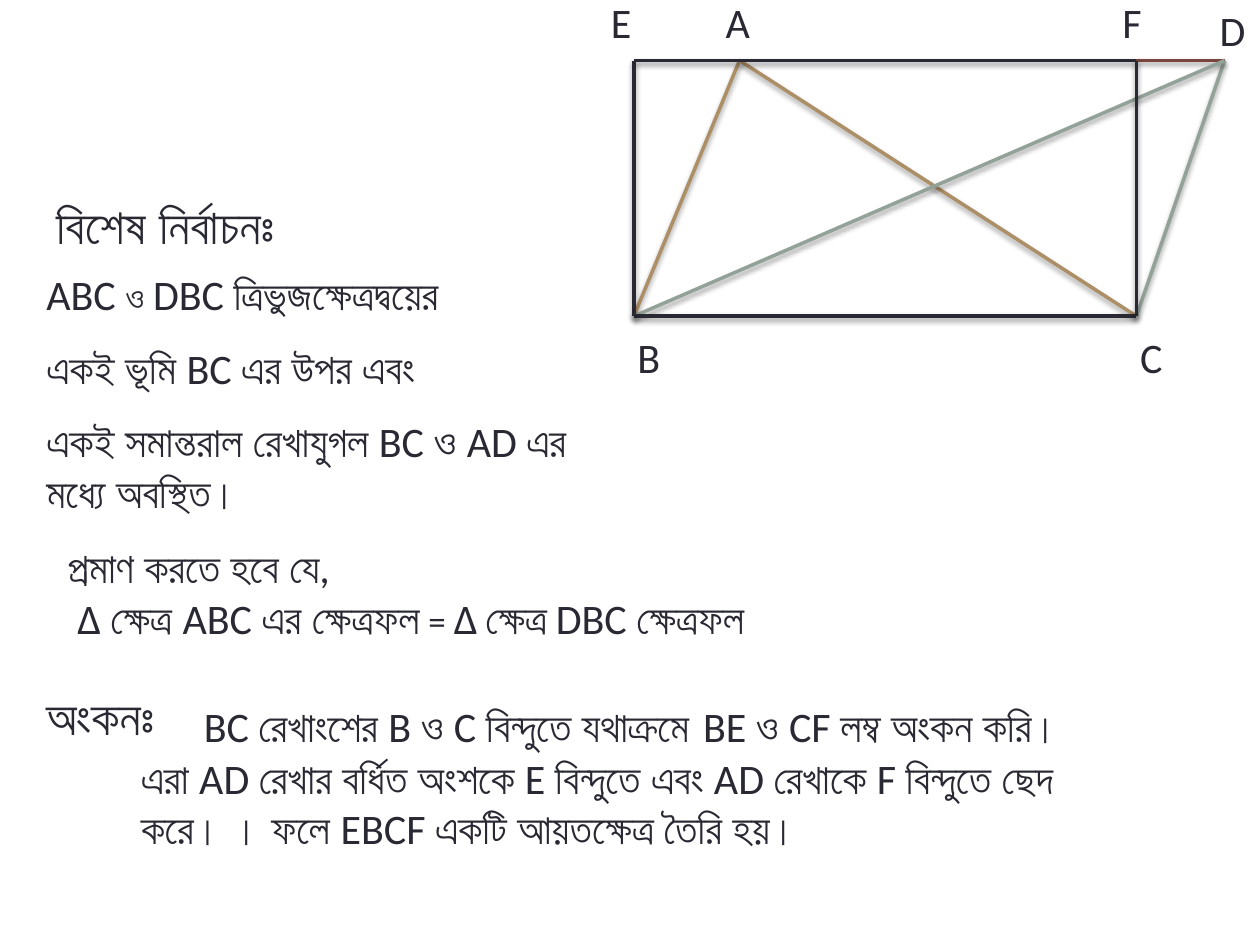
from lxml.etree import SubElement
from pptx import Presentation
from pptx.dml.color import RGBColor
from pptx.enum.shapes import MSO_CONNECTOR
from pptx.enum.text import MSO_AUTO_SIZE
from pptx.oxml.ns import qn
from pptx.util import Pt

INK = RGBColor(0x29, 0x29, 0x34)
RED = RGBColor(0x79, 0x46, 0x3D)
TAN = RGBColor(0xAD, 0x8F, 0x67)
SAGE = RGBColor(0x93, 0xA2, 0x99)

TOP, BASE = 34.6, 180.7
LEFT, RIGHT = 362.2, 649.4
SPOTS = {
    "A": (422.6, TOP), "F": (RIGHT, TOP), "E": (LEFT, TOP),
    "B": (LEFT, BASE), "C": (RIGHT, BASE), "D": (699.8, TOP),
}
UNDER = [("FD", RED), ("DC", SAGE), ("AC", TAN), ("AB", TAN), ("BD", SAGE)]
FRAME = [("EF", INK), ("BC", INK), ("BE", INK), ("CF", INK)]
LABELS = {
    "A": (407.5, -5.8), "F": (634.3, -5.8), "E": (342, -5.8),
    "B": (357.1, 185.8), "C": (644.4, 185.8), "D": (689.8, -0.7),
}
SIDE = 30.2

BODY = {"size": Pt(24), "name": "Calibri"}
HEAD = {"size": Pt(28), "name": "Calibri", "bold": True}
SMALL = {"size": Pt(20), "name": "Calibri"}
WIDE = {"size": Pt(32), "name": "Calibri"}
FIT = {"word_wrap": True, "auto_size": MSO_AUTO_SIZE.SHAPE_TO_FIT_TEXT}

NOTES = [
    ((19.4, 149.8, 311.8, 36), [
        (0, [("ABC ", BODY), ("ও ", SMALL), ("DBC ত্রিভুজক্ষেত্রদ্বয়ের", BODY)])]),
    ((19.4, 192.2, 311.8, 36), [(0, [("একই ভূমি BC এর উপর এবং", BODY)])]),
    ((19.4, 234, 311.8, 65.5), [
        (0, [("একই সমান্তরাল রেখাযুগল BC ও AD এর মধ্যে অবস্থিত।", BODY)])]),
    ((31.7, 306, 540, 65.5), [
        (0, [("প্রমাণ করতে হবে যে,", BODY)]),
        (5.4, [("Δ ক্ষেত্র ABC এর ক্ষেত্রফল", BODY), (" = ", SMALL), ("Δ", BODY),
               (" ", SMALL), ("ক্ষেত্র", BODY), (" ", SMALL), ("DBC ক্ষেত্রফল", BODY)])]),
    ((25.2, 108, 203.8, 41), [(0, [("বিশেষ নির্বাচনঃ", HEAD)])]),
    ((19.4, 388.8, 90, 41), [(0, [("অংকনঃ", HEAD)])]),
    ((109.4, 388.8, 556.6, 46), [
        (0, [("BC রেখাংশের B ও C বিন্দুতে যথাক্রমে", BODY), (" ", WIDE),
             ("BE ও CF লম্ব অংকন করি।", BODY)])]),
    ((73.4, 426.2, 556.6, 65.5), [
        (0, [("এরা AD রেখার বর্ধিত অংশকে E বিন্দুতে এবং AD রেখাকে F বিন্দুতে ছেদ করে। । "
              "ফলে EBCF একটি আয়তক্ষেত্র তৈরি হয়।", BODY)])]),
]


def style(item, looks):
    for key, val in looks.items():
        setattr(item, key, val)


def shade(line):
    fx = SubElement(line._element.spPr, qn("a:effectLst"))
    cast = SubElement(fx, qn("a:outerShdw"), blurRad=str(Pt(3.1)),
                      dist=str(Pt(1.6)), dir="5400000", rotWithShape="0")
    tint = SubElement(cast, qn("a:srgbClr"), val="000000")
    SubElement(tint, qn("a:alpha"), val="38000")


def draw(shapes, lines):
    for (start, end), tone in lines:
        ends = [Pt(n) for n in SPOTS[start] + SPOTS[end]]
        line = shapes.add_connector(MSO_CONNECTOR.STRAIGHT, *ends)
        line.line.color.rgb = tone
        line.line.width = Pt(2)
        shade(line)


def write(shapes, place, paras):
    frame = shapes.add_textbox(*[Pt(n) for n in place]).text_frame
    style(frame, FIT)
    for i, (indent, runs) in enumerate(paras):
        para = frame.add_paragraph() if i else frame.paragraphs[0]
        if indent:
            para._p.get_or_add_pPr().set("marL", str(Pt(indent)))
        for text, looks in runs:
            run = para.add_run()
            run.text = text
            style(run.font, looks)
            run.font.color.rgb = INK


def main():
    deck = Presentation()
    style(deck, {"slide_width": Pt(720), "slide_height": Pt(540)})
    slide = deck.slides.add_slide(deck.slide_layouts[6])
    figure = slide.shapes.add_group_shape().shapes
    draw(figure, UNDER)
    for name, spot in LABELS.items():
        write(figure, (*spot, SIDE, SIDE), [(0, [(name, BODY)])])
    draw(figure, FRAME)
    for place, paras in NOTES:
        write(slide.shapes, place, paras)
    deck.save("out.pptx")


if __name__ == "__main__":
    main()
